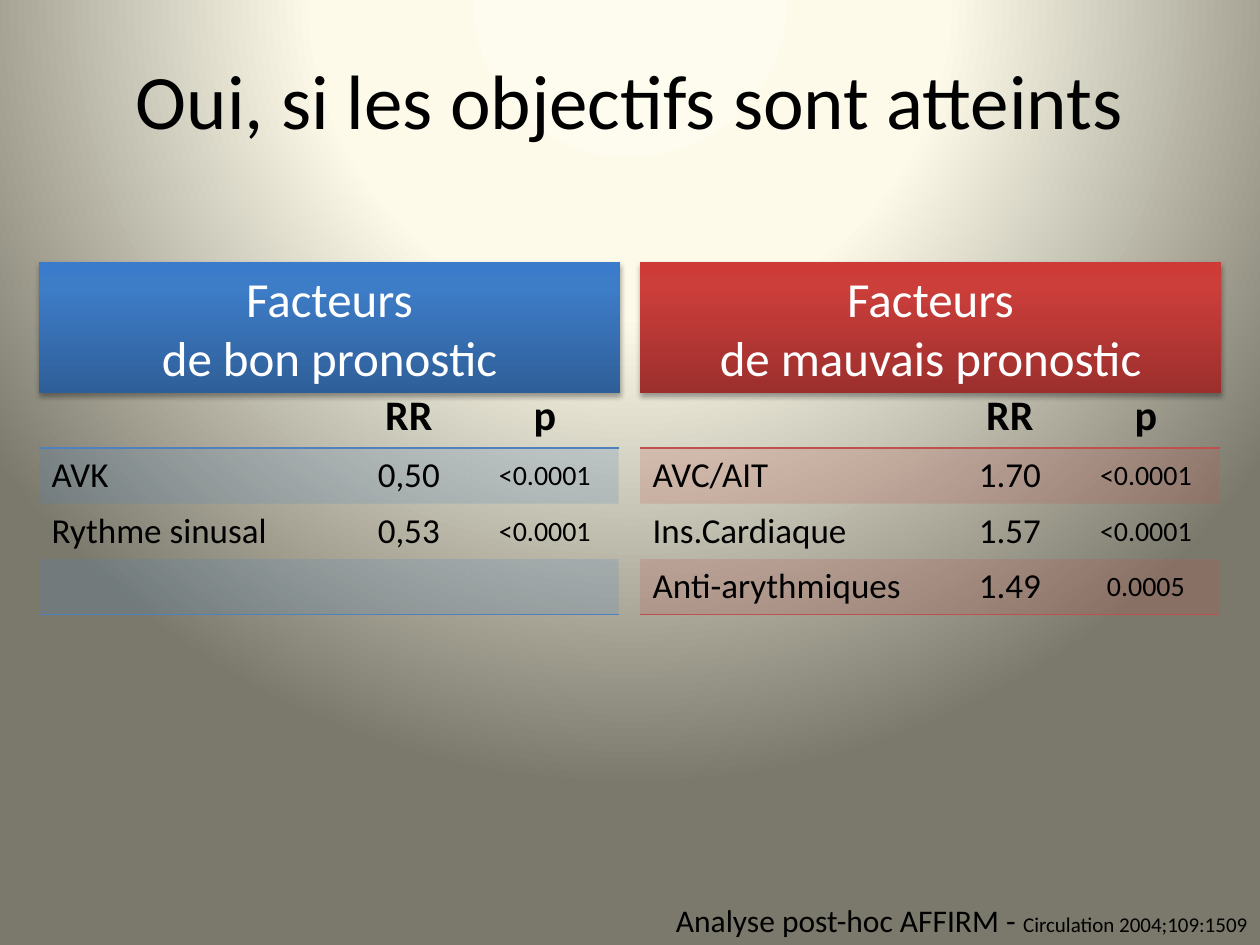
from lxml.etree import SubElement as Sub
from pptx import Presentation
from pptx.enum.shapes import MSO_SHAPE as Kind
from pptx.enum.text import MSO_ANCHOR as Anchor, PP_ALIGN as Align
from pptx.dml.color import RGBColor as Rgb
from pptx.oxml import parse_xml
from pptx.oxml.ns import qn
from pptx.util import Inches, Pt

NS = 'xmlns:a="http://schemas.openxmlformats.org/drawingml/2006/main"'
COLORS = {"text": "000000", "light": "FFFFFF", "good": "4F81BD", "bad": "C0504D"}
FADES = {
    "back": [(0, "FEFCEE"), (40, "FDFAEA"), (100, "7B796B")],
    "good": [(0, "2F5F99"), (80, "3D7CC7"), (100, "3A7CCB")],
    "bad": [(0, "9C2F2D"), (80, "CB3E3A"), (100, "CE3B37")],
}
COLS = (2.44, 0.99, 1.17)
ROWS = (0.5, 0.44, 0.44, 0.44)
EDGES = {0: "TB", 1: "T", 3: "B"}
WIDTH = 4.61
HEAD = ("", "RR", "p")
SIDES = [
    ("bad", 5.08, "de mauvais pronostic", [
        ("AVC/AIT", "1.70", "<0.0001"),
        ("Ins.Cardiaque", "1.57", "<0.0001"),
        ("Anti-arythmiques", "1.49", "0.0005"),
    ]),
    ("good", 0.31, "de bon pronostic", [
        ("AVK", "0,50", "<0.0001"),
        ("Rythme sinusal", "0,53", "<0.0001"),
        ("", "", ""),
    ]),
]


def fade(name, shade):
    stops = "".join(
        f'<a:gs pos="{pos * 1000}"><a:srgbClr val="{color}"/></a:gs>'
        for pos, color in FADES[name])
    return parse_xml(f'<a:gradFill {NS} rotWithShape="1">'
                     f'<a:gsLst>{stops}</a:gsLst>{shade}</a:gradFill>')


def swap(prop, fill):
    old = prop.find(qn("a:solidFill"))
    prop.replace(old, fill)


def write(para, text, size, color="text", bold=False):
    run = para.add_run()
    run.text = text
    look = {"name": "Calibri", "size": Pt(size), "bold": bold}
    for key, value in look.items():
        setattr(run.font, key, value)
    run.font.color.rgb = Rgb.from_string(COLORS[color])


def paint(slide):
    slide.background.fill.solid()
    prop = slide.element.find(".//" + qn("p:bgPr"))
    swap(prop, fade("back", '<a:path path="circle"><a:fillToRect l="50000" '
                            't="0" r="50000" b="100000"/></a:path>'))


def add_text(slide, box, align, runs):
    frame = slide.shapes.add_textbox(*map(Inches, box)).text_frame
    frame.word_wrap = True
    para = frame.paragraphs[0]
    para.alignment = align
    for text, size in runs:
        write(para, text, size)


def add_band(slide, left, name, lines):
    band = slide.shapes.add_shape(
        Kind.RECTANGLE, *map(Inches, (left, 2.08, WIDTH, 1.04)))
    band.line.fill.background()
    band.fill.solid()
    prop = band.element.spPr
    swap(prop, fade(name, '<a:lin ang="16200000" scaled="0"/>'))
    prop.append(parse_xml(
        f'<a:effectLst {NS}><a:outerShdw blurRad="{int(Pt(3.1))}" '
        f'dist="{int(Pt(1.8))}" dir="5400000" rotWithShape="0">'
        '<a:srgbClr val="000000"><a:alpha val="35000"/></a:srgbClr>'
        '</a:outerShdw></a:effectLst>'))
    frame = band.text_frame
    frame.word_wrap = True
    for i, line in enumerate(lines):
        para = frame.add_paragraph() if i else frame.paragraphs[0]
        para.alignment = Align.CENTER
        write(para, line, 28, "light")


def tint(cell, name, shaded, edges):
    prop = cell._tc.get_or_add_tcPr()
    if shaded:
        cell.fill.solid()
        cell.fill.fore_color.rgb = Rgb.from_string(COLORS[name])
        Sub(prop.find(".//" + qn("a:srgbClr")), qn("a:alpha"), val="20000")
    else:
        cell.fill.background()
    ink = f'<a:solidFill><a:srgbClr val="{COLORS[name]}"/></a:solidFill>'
    for i, edge in enumerate("LRTB"):
        fill = ink if edge in edges else "<a:noFill/>"
        prop.insert(i, parse_xml(
            f'<a:ln{edge} {NS} w="12700">{fill}</a:ln{edge}>'))


def add_grid(slide, left, name, rows):
    frame = slide.shapes.add_table(
        len(ROWS), len(COLS), *map(Inches, (left, 3.05, WIDTH, sum(ROWS))))
    table = frame.table
    table.first_row = table.horz_banding = False
    for col, width in zip(table.columns, COLS):
        col.width = Inches(width)
    for row, height in zip(table.rows, ROWS):
        row.height = Inches(height)
    for r, values in enumerate([HEAD, *rows]):
        for c, text in enumerate(values):
            cell = table.cell(r, c)
            tint(cell, name, r % 2 == 1, EDGES.get(r, ""))
            cell.vertical_anchor = Anchor.MIDDLE if r else Anchor.TOP
            if text:
                para = cell.text_frame.paragraphs[0]
                para.alignment = Align.CENTER if c else Align.LEFT
                write(para, text, (20, 20, 16)[c] if r else 24, bold=r == 0)


def main():
    deck = Presentation()
    deck.slide_width, deck.slide_height = Inches(10), Inches(7.5)
    slide = deck.slides.add_slide(deck.slide_layouts[6])
    paint(slide)
    for name, left, label, rows in SIDES:
        add_grid(slide, left, name, rows)
    add_text(slide, (0.39, 7.1, 9.61, 0.4), Align.RIGHT,
             [("Analyse post-hoc AFFIRM - ", 18), ("Circulation 2004;109:1509", 12)])
    for name, left, label, rows in reversed(SIDES):
        add_band(slide, left, name, ("Facteurs", label))
    add_text(slide, (0, 0.37, 10, 1.25), Align.CENTER,
             [("Oui, si les objectifs sont atteints", 44)])
    deck.save("out.pptx")


if __name__ == "__main__":
    main()
